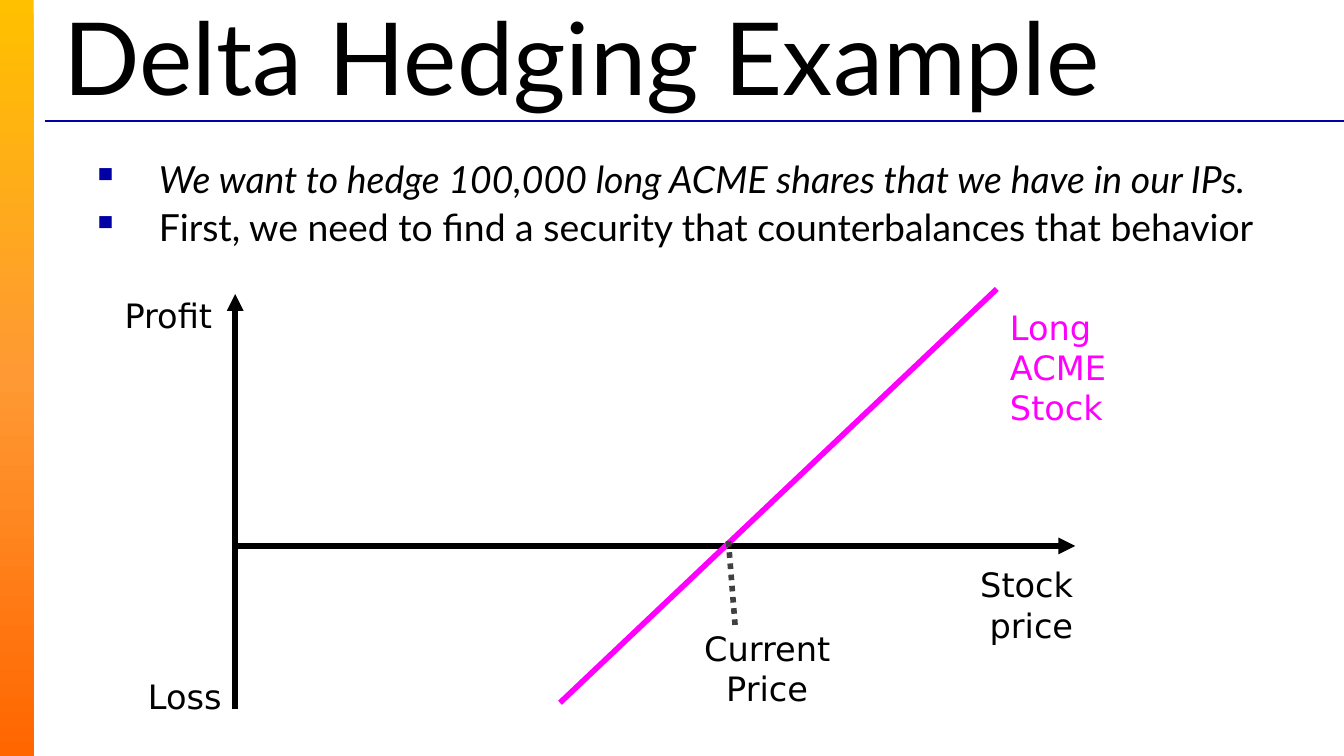
from copy import deepcopy

from lxml import etree
from pptx import Presentation
from pptx.dml.color import RGBColor
from pptx.enum.dml import MSO_LINE
from pptx.enum.shapes import MSO_CONNECTOR, MSO_SHAPE
from pptx.enum.text import MSO_ANCHOR, PP_ALIGN
from pptx.oxml.ns import qn
from pptx.util import Pt

LEFT, CENTER, RIGHT = PP_ALIGN.LEFT, PP_ALIGN.CENTER, PP_ALIGN.RIGHT
TOP, MIDDLE = MSO_ANCHOR.TOP, MSO_ANCHOR.MIDDLE
STRAIGHT, RECTANGLE, DOTTED = MSO_CONNECTOR.STRAIGHT, MSO_SHAPE.RECTANGLE, MSO_LINE.ROUND_DOT

COLORS = {
    "text": "000000",
    "accent": "0000A5",
    "stock": "FF00FF",
    "marker": "404040",
    "bar_top": "FFC000",
    "bar_middle": "FF9933",
    "bar_bottom": "FF6600",
}

prs = Presentation()
prs.slide_width, prs.slide_height = Pt(720), Pt(405)
slide = prs.slides.add_slide(prs.slide_layouts[6])


def add_line(start, end, color, width=3):
    line = slide.shapes.add_connector(STRAIGHT, *map(Pt, start + end))
    line.line.color.rgb = RGBColor.from_string(COLORS[color])
    line.line.width = Pt(width)
    etree.SubElement(line._element.spPr, qn("a:effectLst"))
    return line


def add_text(box, lines, size, font="DejaVu Sans", color="text", align=LEFT, anchor=TOP):
    frame = slide.shapes.add_textbox(*map(Pt, box)).text_frame
    frame.word_wrap = True
    frame.vertical_anchor = anchor
    frame.text = "\n".join(lines)
    for paragraph in frame.paragraphs:
        paragraph.alignment = align
        run_font = paragraph.runs[0].font
        run_font.name, run_font.size = font, Pt(size)
        run_font.color.rgb = RGBColor.from_string(COLORS[color])
    return frame


# Gradient bar on the left edge
side_bar = slide.shapes.add_shape(RECTANGLE, 0, 0, Pt(18), Pt(405))
side_bar.shadow.inherit = False
side_bar.line.fill.background()
side_bar.fill.gradient()
side_bar.fill.gradient_angle = 270
stop_list = side_bar._element.spPr.find(qn("a:gradFill")).find(qn("a:gsLst"))
stop_list.insert(1, deepcopy(stop_list[0]))
bar_colors = ("bar_top", "bar_middle", "bar_bottom")
for stop, position, name in zip(side_bar.fill.gradient_stops, (0, 0.5, 1), bar_colors):
    stop.position = position
    stop.color.rgb = RGBColor.from_string(COLORS[name])

# Title and rule
add_line((24, 64.8), (720, 64.8), "accent", 0.75)
add_text((27, 10.8, 690, 38), ["Delta Hedging Example"], 54, "Lato", anchor=MIDDLE)

# Bullets
bullets = add_text((42, 82.8, 678, 90), [
    "We want to hedge 100,000 long ACME shares that we have in our IPs.",
    "First, we need to find a security that counterbalances that behavior",
], 20, "Lato")
bullets.paragraphs[0].runs[0].font.italic = True
for paragraph in bullets.paragraphs:
    paragraph.line_spacing = 0.9
    paragraph.space_before = Pt(4)
    properties = paragraph._p.get_or_add_pPr()
    properties.set("marL", str(Pt(36)))
    properties.set("indent", str(Pt(-36)))
    bullet_color = etree.SubElement(properties, qn("a:buClr"))
    etree.SubElement(bullet_color, qn("a:srgbClr"), val=COLORS["accent"])
    etree.SubElement(properties, qn("a:buChar"), char="▪")

# Axes, with arrowheads at the profit and price ends
profit_axis = add_line((126, 380), (126, 157.5), "text")
price_axis = add_line((126, 292.5), (576, 292.5), "text")
for axis in (profit_axis, price_axis):
    etree.SubElement(axis.line._get_or_add_ln(), qn("a:tailEnd"), type="triangle")

# Payoff of the stock and the current price marker
add_line((300, 376.5), (534, 154.8), "stock")
price_marker = add_line((393.8, 334.8), (390.2, 289.5), "marker")
price_marker.line.dash_style = DOTTED

# Chart labels
for box, label, color, align in (
    ((504, 298.8, 78, 51), "Stock price", "text", RIGHT),
    ((534, 160.6, 108, 73), "Long ACME Stock", "stock", LEFT),
    ((360, 332.8, 102, 51), "Current Price", "text", CENTER),
    ((36.7, 154.2, 84, 29), "Profit", "text", RIGHT),
    ((41.8, 358.6, 84, 29), "Loss", "text", RIGHT),
):
    add_text(box, [label], 18, color=color, align=align)

prs.save("out.pptx")
